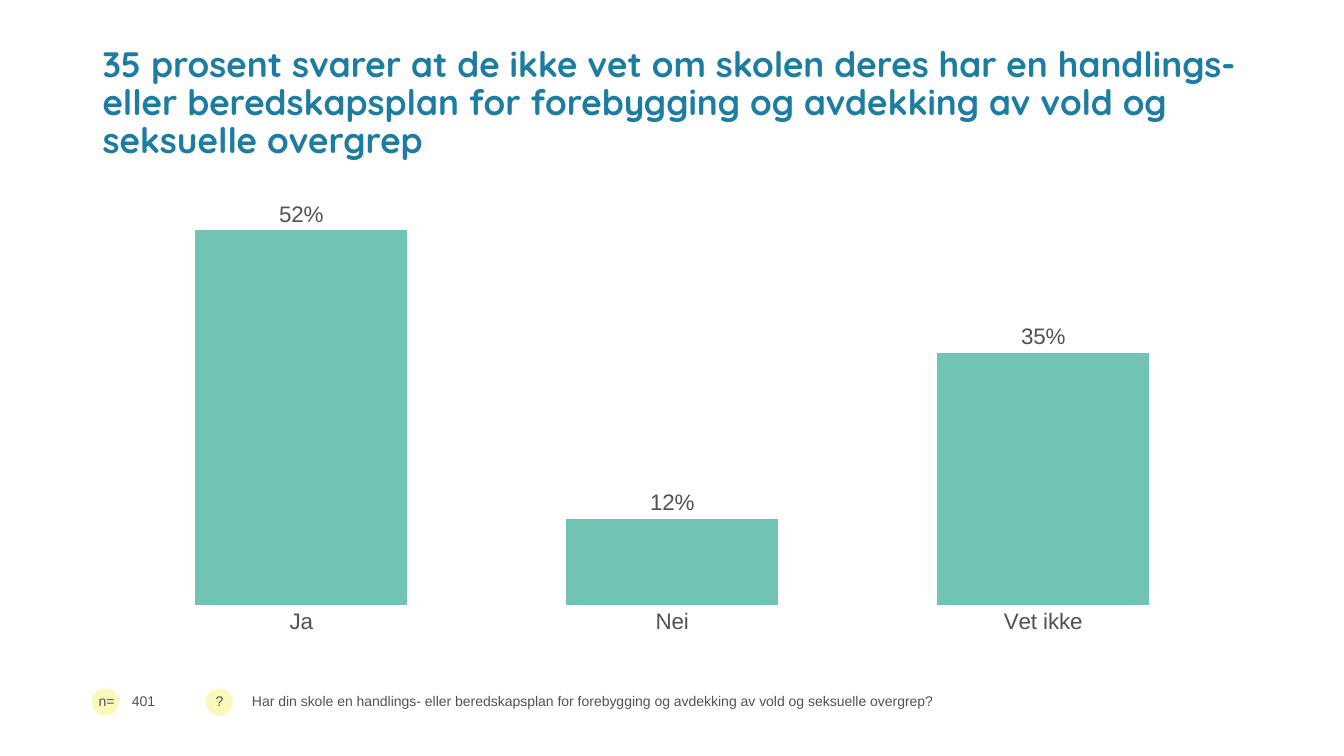
from pptx import Presentation
from pptx import util as u
from pptx.chart import data as chart_data
from pptx.dml.color import RGBColor
from pptx.enum import chart as chart_enum, shapes, text

COLORS = {"title": "1C7CA1", "text": "515350", "bar": "71C3B3", "badge": "FCF7BA"}
ANSWERS = {"Ja": 0.52, "Nei": 0.12, "Vet ikke": 0.35}
TITLE = (
    "35 prosent svarer at de ikke vet om skolen deres har en handlings- "
    "eller beredskapsplan for forebygging og avdekking av vold og seksuelle overgrep"
)
QUESTION = (
    "Har din skole en handlings- eller beredskapsplan for forebygging "
    "og avdekking av vold og seksuelle overgrep?"
)


def color(name):
    """Return a named colour."""
    return RGBColor.from_string(COLORS[name])


def style(font, size, name="Arial", color_name="text", bold=False):
    """Set the size, face, colour and weight of a font."""
    font.size = u.Pt(size)
    font.name = name
    font.bold = bold
    font.color.rgb = color(color_name)


def add_text(slide, words, box, wrap=True, **font_format):
    """Add a vertically centred paragraph in a box given in points."""
    frame = slide.shapes.add_textbox(*map(u.Pt, box)).text_frame
    frame.word_wrap = wrap
    frame.vertical_anchor = text.MSO_ANCHOR.MIDDLE
    paragraph = frame.paragraphs[0]
    paragraph.line_spacing = 0.9
    run = paragraph.add_run()
    run.text = words
    style(run.font, **font_format)


def add_answer_chart(slide, box):
    """Add the column chart of answer shares."""
    data = chart_data.CategoryChartData(number_format="0%")
    data.categories = list(ANSWERS)
    data.add_series("Andel", list(ANSWERS.values()))
    chart = slide.shapes.add_chart(
        chart_enum.XL_CHART_TYPE.COLUMN_CLUSTERED, *map(u.Pt, box), data
    ).chart
    chart.has_legend = False
    chart.has_title = False
    style(chart.font, 18)

    value_axis = chart.value_axis
    value_axis.minimum_scale = 0
    value_axis.maximum_scale = 0.6
    value_axis.major_unit = 0.2
    value_axis.has_major_gridlines = False
    value_axis.visible = False

    category_axis = chart.category_axis
    category_axis.major_tick_mark = chart_enum.XL_TICK_MARK.NONE
    category_axis.format.line.fill.background()
    style(category_axis.tick_labels.font, 16)

    plot = chart.plots[0]
    plot.gap_width = 75
    plot.vary_by_categories = False
    fill = plot.series[0].format.fill
    fill.solid()
    fill.fore_color.rgb = color("bar")
    plot.has_data_labels = True
    labels = plot.data_labels
    labels.show_value = True
    labels.number_format = "0%"
    labels.number_format_is_linked = False
    labels.position = chart_enum.XL_LABEL_POSITION.OUTSIDE_END
    style(labels.font, 16)


def add_badge_note(slide, mark, note, box, mark_shift=0):
    """Add a round badge with its mark and a note to the right of it."""
    left, top, width, height = box
    badge = slide.shapes.add_shape(
        shapes.MSO_SHAPE.OVAL, *map(u.Pt, (left, top, height, height))
    )
    badge.shadow.inherit = False
    badge.fill.solid()
    badge.fill.fore_color.rgb = color("badge")
    badge.line.fill.background()
    add_text(slide, mark, (left + mark_shift, top, 32, height), wrap=False, size=10)
    note_left = 26 if mark == "?" else 21.6
    add_text(slide, note, (left + note_left, top, width - note_left, height), size=10)


def add_survey_slide(presentation, box):
    """Add a slide with a headline, a chart and the survey details."""
    slide = presentation.slides.add_slide(presentation.slide_layouts[6])
    left, top, width, height = box
    add_text(slide, TITLE, (left, top, width, 91.4), size=25.2, name="Quicksand",
             color_name="title", bold=True)
    add_answer_chart(slide, (left, top + 87.8, width, 342.7))
    footer_height = 19.4
    footer_top = top + height - footer_height
    add_badge_note(slide, "n=", "401", (left - 0.7, footer_top, 75, footer_height), -2.2)
    add_badge_note(slide, "?", QUESTION, (left + 80.7, footer_top, 739.6, footer_height))


def main():
    """Build and save the presentation."""
    presentation = Presentation()
    presentation.slide_width = u.Pt(960)
    presentation.slide_height = u.Pt(540)
    add_survey_slide(presentation, (66.2, 28.8, 828, 482.4))
    presentation.save("out.pptx")


if __name__ == "__main__":
    main()
